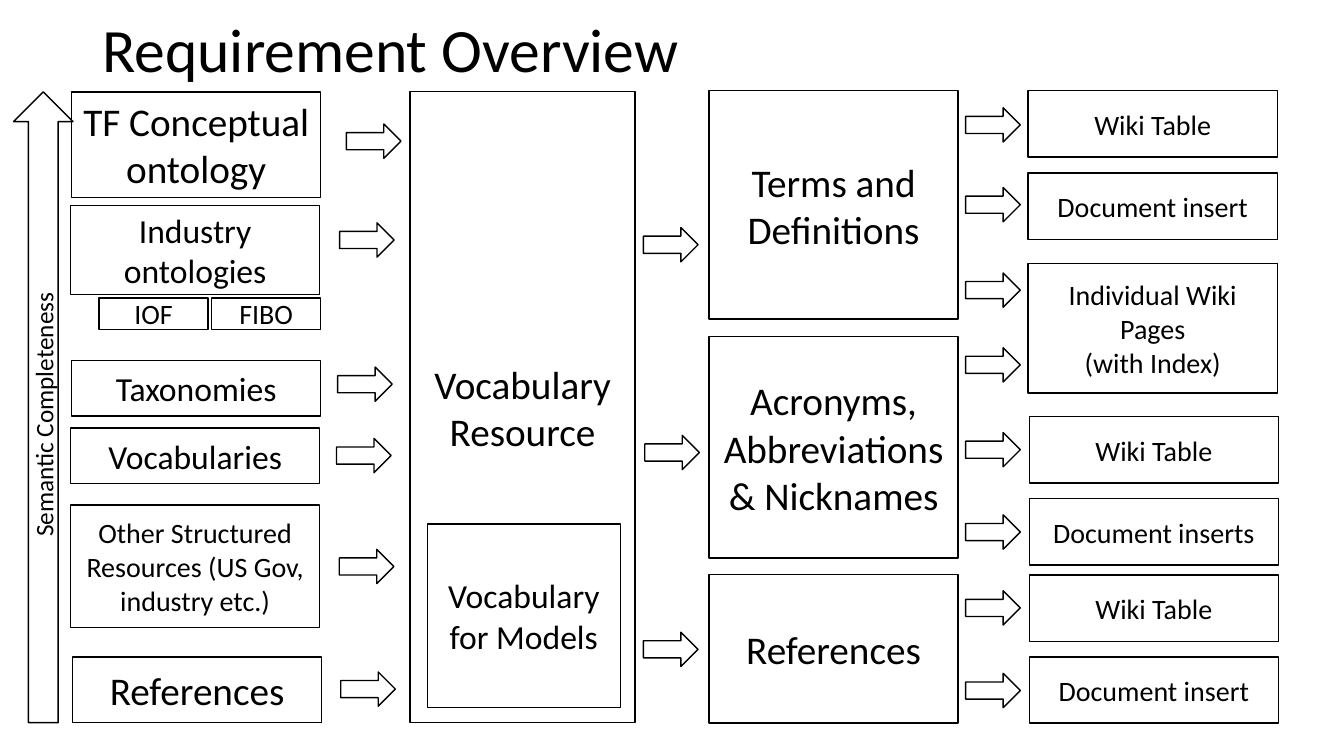
from dataclasses import dataclass

from pptx import Presentation
from pptx.dml.color import RGBColor
from pptx.enum.shapes import MSO_SHAPE
from pptx.enum.text import MSO_ANCHOR, PP_ALIGN
from pptx.util import Pt


@dataclass(frozen=True)
class Theme:
    font: str = "Calibri"
    ink: RGBColor = RGBColor(0, 0, 0)
    paper: RGBColor = RGBColor(255, 255, 255)
    line: float = 1
    title: float = 44
    large: float = 28
    medium: float = 24
    label: float = 18
    small: float = 20


class Diagram:
    """Draws the elements of one page in one style; lengths are points."""

    def __init__(self, page, theme):
        self.page = page
        self.theme = theme

    def set_text(self, shape, text, size, align=PP_ALIGN.CENTER):
        frame = shape.text_frame
        frame.word_wrap = True
        frame.vertical_anchor = MSO_ANCHOR.MIDDLE
        frame.text = text
        for para in frame.paragraphs:
            para.alignment = align
            para.font.name = self.theme.font
            para.font.size = Pt(size)
            para.font.color.rgb = self.theme.ink

    def title(self, text, left, top, width, height):
        box = self.page.shapes.add_textbox(Pt(left), Pt(top), Pt(width), Pt(height))
        self.set_text(box, text, self.theme.title, PP_ALIGN.LEFT)
        box.text_frame.paragraphs[0].line_spacing = 0.9

    def outline(self, kind, left, top, width, height):
        shape = self.page.shapes.add_shape(kind, Pt(left), Pt(top), Pt(width), Pt(height))
        shape.shadow.inherit = False
        shape.fill.solid()
        shape.fill.fore_color.rgb = self.theme.paper
        shape.line.color.rgb = self.theme.ink
        shape.line.width = Pt(self.theme.line)
        return shape

    def box(self, text, size, left, top, width, height):
        shape = self.outline(MSO_SHAPE.RECTANGLE, left, top, width, height)
        self.set_text(shape, text, size)

    def arrow(self, left, top, width=39, height=24.5):
        return self.outline(MSO_SHAPE.RIGHT_ARROW, left, top, width, height)

    def upward_arrow(self, text, left, top, width, height):
        # The frame is laid out sideways around the same centre, then turned
        shift = (height - width) / 2
        shape = self.arrow(left - shift, top + shift, height, width)
        shape.rotation = 270
        self.set_text(shape, text, self.theme.label)


def main():
    deck = Presentation()
    deck.slide_width, deck.slide_height = Pt(960), Pt(540)
    theme = Theme()
    diagram = Diagram(deck.slides.add_slide(deck.slide_layouts[6]), theme)
    column_width = 178

    diagram.title("Requirement Overview", 66, 0, 828, 75.6)

    # Sources: text, size, left, top, height
    sources = [
        ("TF Conceptual ontology", theme.large, 51.1, 65.6, 75.6),
        ("Industry ontologies", theme.medium, 50.4, 147, 63.2),
        ("Taxonomies", theme.medium, 51.1, 257.6, 39.6),
        ("Vocabularies", theme.medium, 50.4, 305.6, 39.6),
        ("Other Structured Resources (US Gov, industry etc.)",
         theme.small, 50.4, 360.6, 87.8),
        ("References", theme.large, 51.8, 469.4, 46.8),
    ]
    for text, size, left, top, height in sources:
        diagram.box(text, size, left, top, column_width, height)
    for text, left in [("IOF", 70.8), ("FIBO", 151.2)]:
        diagram.box(text, theme.small, left, 213, 77.8, 22.2)

    # Central resource and the part inside it
    diagram.box("Vocabulary Resource", theme.large, 293, 65.6, 160.6, 450.6)
    diagram.box("Vocabulary for Models", theme.medium, 305.2, 374.2, 138, 131)

    # Kinds of content: text, top, height
    contents = [
        ("Terms and Definitions", 64.8, 163.2),
        ("Acronyms,\nAbbreviations\n& Nicknames", 240.4, 158.2),
        ("References", 410.4, 106),
    ]
    for text, top, height in contents:
        diagram.box(text, theme.large, 506.4, top, column_width, height)

    # Outputs: text, left, top, height
    outputs = [
        ("Wiki Table", 734.4, 64.8, 47.4),
        ("Document insert", 734.4, 123.6, 47.4),
        ("Individual Wiki Pages\n(with Index)", 734.4, 188.2, 92.6),
        ("Wiki Table", 735.2, 297.6, 47.4),
        ("Document inserts", 735.2, 356.2, 47.4),
        ("Wiki Table", 735.2, 410.8, 47.4),
        ("Document insert", 735.2, 469.2, 47.4),
    ]
    for text, left, top, height in outputs:
        diagram.box(text, theme.small, left, top, column_width, height)

    # Arrows from sources, from the resource, and to the outputs
    source_arrows = [(247.4, 88.6), (242.6, 159.2), (241.2, 262.2),
                     (240.4, 313.2), (242.4, 392.4), (243.4, 480)]
    resource_arrows = [(459.6, 162.6), (460.6, 311), (459.6, 451.6)]
    output_arrows = [(689.8, top) for top in
                     (77, 134, 195, 248.4, 309, 367.8, 422, 481)]
    for left, top in source_arrows + resource_arrows + output_arrows:
        diagram.arrow(left, top)

    # Scale along the left edge
    diagram.upward_arrow("Semantic Completeness", 9.7, 65.6, 42.5, 450.6)

    deck.save("out.pptx")


if __name__ == "__main__":
    main()
